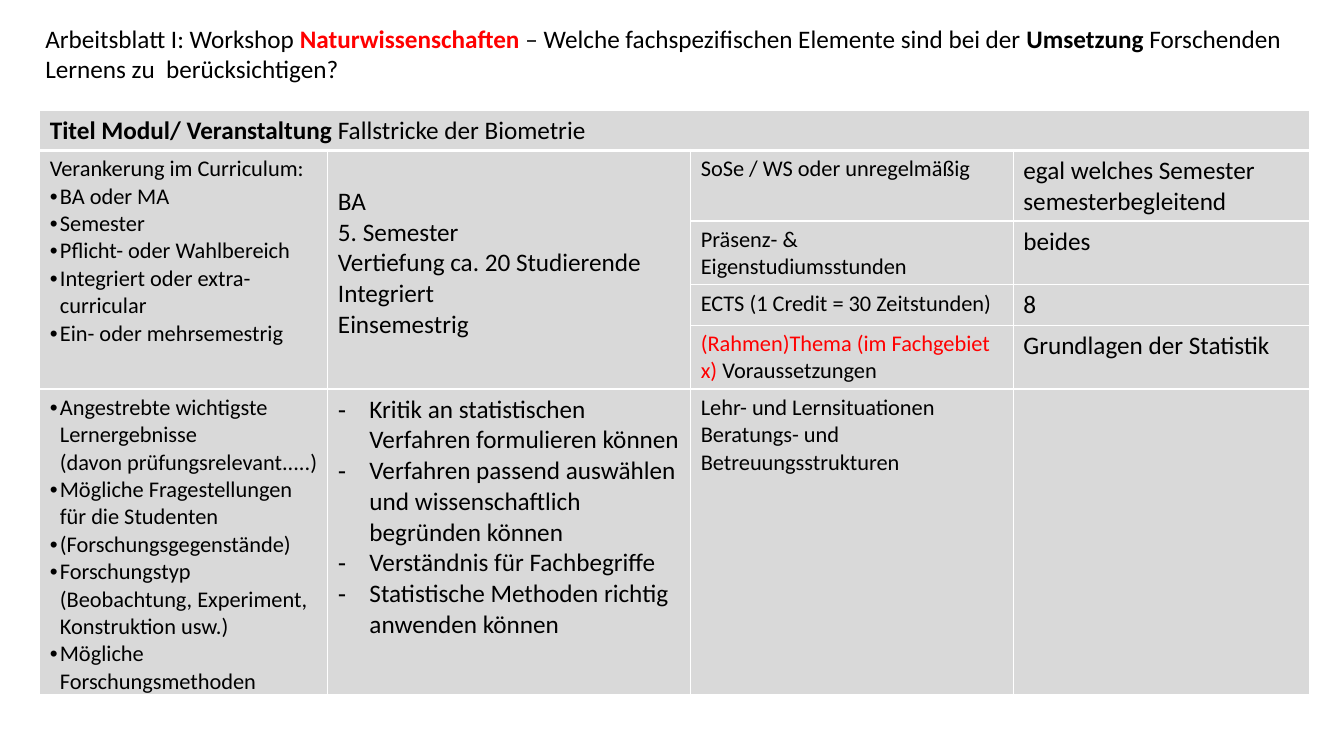
from dataclasses import dataclass

from lxml.etree import SubElement
from pptx import Presentation
from pptx.dml.color import RGBColor as Color
from pptx.enum.text import MSO_ANCHOR as Anchor, MSO_AUTO_SIZE as AutoSize, PP_ALIGN as Align
from pptx.oxml.ns import qn
from pptx.util import Pt


@dataclass(frozen=True)
class Theme:
    font: str = "Calibri"
    text: str = "000000"
    accent: str = "FF0000"
    cell: str = "D9D9D9"
    border: str = "FFFFFF"
    label_size: float = 16
    answer_size: float = 18


THEME = Theme()


@dataclass(frozen=True)
class Run:
    text: str
    bold: bool = False
    color: str = THEME.text


@dataclass(frozen=True)
class Line:
    runs: tuple[Run, ...]
    indent: float = 0
    bullet: str = ""


@dataclass(frozen=True)
class Cell:
    row: int
    column: int
    lines: tuple[Line, ...] = ()
    size: float = THEME.label_size
    row_span: int = 1
    column_span: int = 1
    margin_top: float = 3.6
    margin_bottom: float = 3.6


def lines(*texts: str, indent: float = 0, bullet: str = "") -> tuple[Line, ...]:
    return tuple(Line((Run(text),), indent, bullet) for text in texts)


def dots(*texts: str) -> tuple[Line, ...]:
    return lines(*texts, indent=7.2, bullet="•")


HEADING = Line((
    Run("Arbeitsblatt I: Workshop "),
    Run("Naturwissenschaften", bold=True, color=THEME.accent),
    Run(" – Welche fachspezifischen Elemente sind bei der "),
    Run("Umsetzung", bold=True),
    Run(" Forschenden Lernens zu  berücksichtigen?"),
))
COLUMN_WIDTHS = (205.8, 259.2, 230.4, 211.7)
ROW_HEIGHTS = (28.8, 50, 45.6, 28.6, 45.6, 218.6)
LARGE = THEME.answer_size
CELLS = (
    Cell(0, 0, (Line((Run("Titel Modul/ Veranstaltung", bold=True),
                      Run(" Fallstricke der Biometrie"))),), LARGE, column_span=4),
    Cell(1, 0, lines("Verankerung im Curriculum:", indent=13.7)
         + dots("BA oder MA", "Semester", "Pflicht- oder Wahlbereich",
                "Integriert oder extra-curricular", "Ein- oder mehrsemestrig"), row_span=4),
    Cell(1, 1, lines("BA", "5. Semester", "Vertiefung ca. 20 Studierende",
                     "Integriert", "Einsemestrig"), LARGE, row_span=4, margin_top=25.6),
    Cell(1, 2, lines("SoSe / WS oder unregelmäßig")),
    Cell(1, 3, lines("egal welches Semester", "semesterbegleitend"), LARGE),
    Cell(2, 2, lines("Präsenz- & Eigenstudiumsstunden")),
    Cell(2, 3, lines("beides"), LARGE),
    Cell(3, 2, lines("ECTS (1 Credit = 30 Zeitstunden)")),
    Cell(3, 3, lines("8"), LARGE),
    Cell(4, 2, (Line((Run("(Rahmen)Thema (im Fachgebiet x) ", color=THEME.accent),
                      Run("Voraussetzungen"))),)),
    Cell(4, 3, lines("Grundlagen der Statistik"), LARGE),
    Cell(5, 0, dots("Angestrebte wichtigste Lernergebnisse \n(davon prüfungsrelevant.....)",
                    "Mögliche Fragestellungen für die Studenten",
                    "(Forschungsgegenstände)",
                    "Forschungstyp (Beobachtung, Experiment, Konstruktion usw.)",
                    "Mögliche Forschungsmethoden"), margin_bottom=0),
    Cell(5, 1, lines("Kritik an statistischen Verfahren formulieren können",
                     "Verfahren passend auswählen und wissenschaftlich begründen können",
                     "Verständnis für Fachbegriffe",
                     "Statistische Methoden richtig anwenden können",
                     indent=22.5, bullet="-"), LARGE),
    Cell(5, 2, lines("Lehr- und Lernsituationen", "Beratungs- und Betreuungsstrukturen")),
    Cell(5, 3),
)


def write_line(paragraph, line: Line, size: float) -> None:
    paragraph.alignment = Align.LEFT
    if line.indent:
        properties = paragraph._p.get_or_add_pPr()
        properties.set("marL", str(Pt(line.indent)))
        properties.set("indent", str(-Pt(line.indent)))
        if line.bullet:
            SubElement(properties, qn("a:buFont"), typeface="Arial")
            SubElement(properties, qn("a:buChar"), char=line.bullet)
    for part in line.runs:
        for index, text in enumerate(part.text.split("\n")):
            if index:
                paragraph.add_line_break()
            run = paragraph.add_run()
            run.text = text
            run.font.name = THEME.font
            run.font.size = Pt(size)
            run.font.bold = part.bold
            run.font.color.rgb = Color.from_string(part.color)


def write_lines(frame, content: tuple[Line, ...], size: float) -> None:
    for index, line in enumerate(content):
        paragraph = frame.add_paragraph() if index else frame.paragraphs[0]
        write_line(paragraph, line, size)


def style_cell(cell, bottom_width: float) -> None:
    cell.fill.solid()
    cell.fill.fore_color.rgb = Color.from_string(THEME.cell)
    properties = cell._tc.get_or_add_tcPr()
    widths = {"a:lnL": 1, "a:lnR": 1, "a:lnT": 1, "a:lnB": bottom_width}
    for index, (side, width) in enumerate(widths.items()):
        border = SubElement(properties, qn(side), w=str(Pt(width)))
        fill = SubElement(border, qn("a:solidFill"))
        SubElement(fill, qn("a:srgbClr"), val=THEME.border)
        properties.insert(index, border)


def add_heading(slide) -> None:
    title = slide.shapes.title
    title.left, title.top, title.width, title.height = Pt(25.2), Pt(13), Pt(910), Pt(51)
    frame = title.text_frame
    frame.word_wrap = True
    frame.auto_size = AutoSize.SHAPE_TO_FIT_TEXT
    frame.vertical_anchor = Anchor.TOP
    write_lines(frame, (HEADING,), LARGE)


def add_module_table(slide) -> None:
    table = slide.shapes.add_table(
        len(ROW_HEIGHTS), len(COLUMN_WIDTHS), Pt(28.4), Pt(78.6),
        Pt(sum(COLUMN_WIDTHS)), Pt(sum(ROW_HEIGHTS))).table
    table.first_row = table.horz_banding = False
    for column, width in zip(table.columns, COLUMN_WIDTHS):
        column.width = Pt(width)
    for index, (row, height) in enumerate(zip(table.rows, ROW_HEIGHTS)):
        row.height = Pt(height)
        for cell in row.cells:
            style_cell(cell, bottom_width=1 if index else 3)
    for entry in CELLS:
        cell = table.cell(entry.row, entry.column)
        if entry.row_span * entry.column_span > 1:
            cell.merge(table.cell(entry.row + entry.row_span - 1,
                                  entry.column + entry.column_span - 1))
        cell.margin_top, cell.margin_bottom = Pt(entry.margin_top), Pt(entry.margin_bottom)
        write_lines(cell.text_frame, entry.lines, entry.size)


def main() -> None:
    presentation = Presentation()
    presentation.slide_width, presentation.slide_height = Pt(960), Pt(540)
    slide = presentation.slides.add_slide(presentation.slide_layouts[5])
    add_heading(slide)
    add_module_table(slide)
    presentation.save("out.pptx")


if __name__ == "__main__":
    main()
